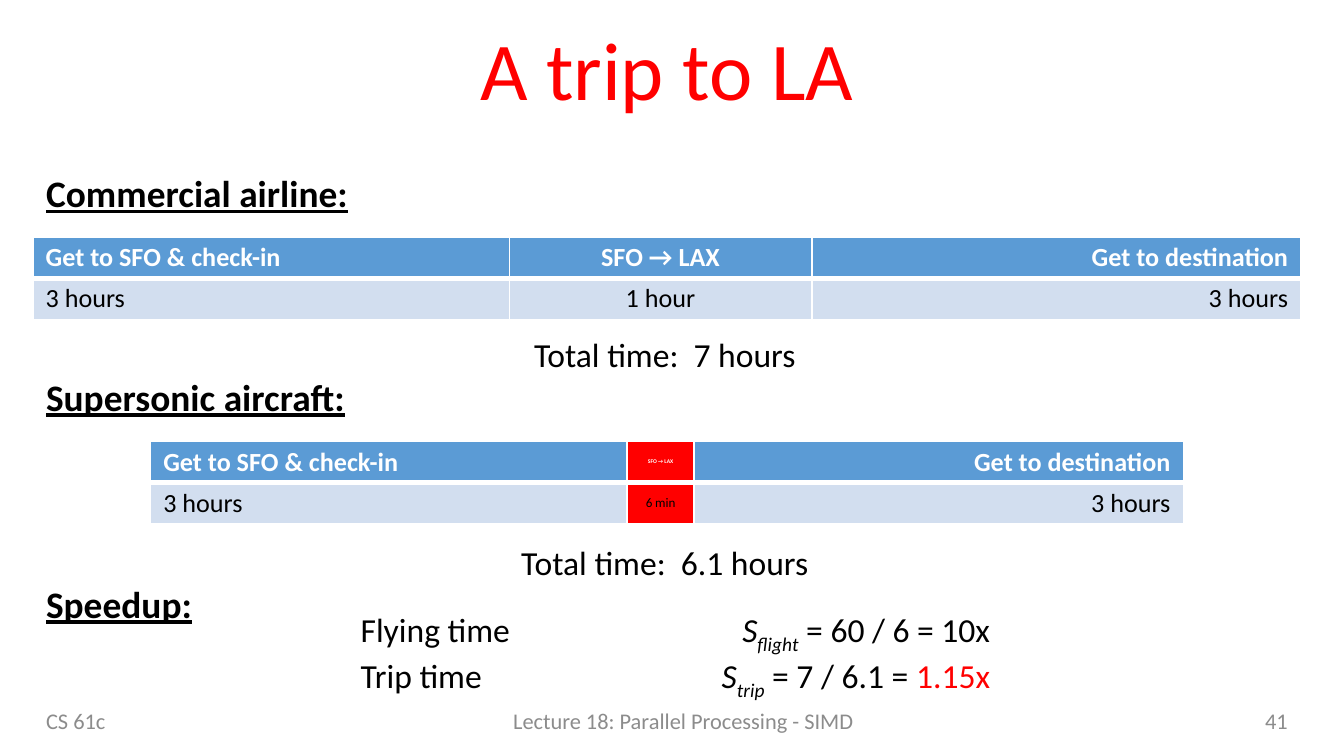
from dataclasses import dataclass

from lxml import etree
from pptx import Presentation
from pptx.dml.color import RGBColor
from pptx.enum.text import MSO_ANCHOR, MSO_AUTO_SIZE, PP_ALIGN
from pptx.oxml.ns import qn
from pptx.util import Pt

LEFT, MID, RIGHT = PP_ALIGN.LEFT, PP_ALIGN.CENTER, PP_ALIGN.RIGHT
TOP, MIDDLE = MSO_ANCHOR.TOP, MSO_ANCHOR.MIDDLE
GROW = MSO_AUTO_SIZE.SHAPE_TO_FIT_TEXT
SCALE = 4572
FONT = "Calibri"
BLACK, WHITE, RED, GREY = "000000", "FFFFFF", "FF0000", "8C8C8C"
BLUE, PALE = "5B9BD5", "D2DEEF"
ALIGNS = (LEFT, MID, RIGHT)
EDGE = 49
ROW = 61


@dataclass
class Run:
    text: str
    size: float = 18
    color: str = BLACK
    bold: bool = False
    under: bool = False
    slant: bool = False
    base: int = 0


@dataclass
class Box:
    at: tuple[int, int, int, int]
    lines: list[list[Run]]
    align: PP_ALIGN = LEFT
    anchor: MSO_ANCHOR = TOP
    wrap: bool = False
    grow: bool = True
    space: float = 1.0
    tab: int = 0


@dataclass
class Trip:
    left: int
    top: int
    width: int
    time: str
    sizes: tuple[int, int] = (14, 14)
    fill: str = ""


def px(num: int) -> int:
    return num * SCALE


def rgb(code: str) -> RGBColor:
    return RGBColor.from_string(code)


def add_run(para, item: Run) -> None:
    run = para.add_run()
    run.text = item.text
    font = run.font
    font.name, font.size = FONT, Pt(item.size)
    font.bold, font.italic, font.underline = item.bold, item.slant, item.under
    font.color.rgb = rgb(item.color)
    if item.base:
        run._r.get_or_add_rPr().set("baseline", str(item.base * 1000))


def add_tab(para, stop: int) -> None:
    tabs = etree.SubElement(para._p.get_or_add_pPr(), qn("a:tabLst"))
    etree.SubElement(tabs, qn("a:tab"), pos=str(px(stop)), algn="r")


def add_box(slide, box: Box) -> None:
    frame = slide.shapes.add_textbox(*map(px, box.at)).text_frame
    frame.word_wrap = box.wrap
    frame.vertical_anchor = box.anchor
    if box.grow:
        frame.auto_size = GROW
    for num, line in enumerate(box.lines):
        para = frame.add_paragraph() if num else frame.paragraphs[0]
        para.alignment = box.align
        para.line_spacing = box.space
        if box.tab:
            add_tab(para, box.tab)
        for item in line:
            add_run(para, item)


def add_edges(cell, foot: int) -> None:
    props = cell._tc.get_or_add_tcPr()
    for side, width in zip("LRTB", (1, 1, 1, foot)):
        line = etree.SubElement(props, qn(f"a:ln{side}"), w=str(Pt(width)))
        fill = etree.SubElement(line, qn("a:solidFill"))
        etree.SubElement(fill, qn("a:srgbClr"), val=WHITE)


def add_trip(slide, trip: Trip) -> None:
    widths = (709, trip.width, 728)
    rows = (
        ("Get to SFO & check-in", "SFO → LAX", "Get to destination"),
        ("3 hours", trip.time, "3 hours"),
    )
    area = (trip.left, trip.top, sum(widths), 2 * ROW)
    grid = slide.shapes.add_table(2, 3, *map(px, area)).table
    for col, width in zip(grid.columns, widths):
        col.width = px(width)
    for r, row in enumerate(rows):
        grid.rows[r].height = px(ROW)
        for c, text in enumerate(row):
            cell = grid.cell(r, c)
            flight = c == 1
            add_edges(cell, 1 if r else 3)
            cell.fill.solid()
            tone = PALE if r else BLUE
            cell.fill.fore_color.rgb = rgb(trip.fill if flight and trip.fill else tone)
            cell.margin_left = cell.margin_right = px(19)
            cell.margin_top = cell.margin_bottom = px(7)
            cell.vertical_anchor = MIDDLE if flight and trip.fill else TOP
            para = cell.text_frame.paragraphs[0]
            para.alignment = ALIGNS[c]
            size = trip.sizes[r] if flight else 14
            add_run(para, Run(text, size, BLACK if r else WHITE, bold=not r))


def head(top: int, width: int, text: str) -> Box:
    return Box((EDGE, top, width, 88), [[Run(text, 20, bold=True, under=True)]])


def total(left: int, top: int, width: int, text: str) -> Box:
    return Box((left, top, width, 80), [[Run(text)]])


def foot(left: int, width: int, text: str, align: PP_ALIGN) -> Box:
    return Box((left, 1043, width, 60), [[Run(text, 12, GREY)]],
               align, MIDDLE, wrap=True, grow=False)


def ratio(name: str, sub: str, rest: list[Run]) -> list[Run]:
    return [Run(f"{name} \t"), Run("S", slant=True),
            Run(sub, slant=True, base=-25), *rest]


BOXES = [
    Box((EDGE, 24, 1887, 172), [[Run("A trip to LA", 44, RED)]],
        MID, MIDDLE, wrap=True, grow=False, space=0.9),
    head(244, 494, "Commercial airline:"),
    head(547, 492, "Supersonic aircraft:"),
    head(855, 260, "Speedup:"),
    total(775, 487, 440, "Total time:  7 hours"),
    total(756, 797, 478, "Total time:  6.1 hours"),
    Box((517, 897, 1390, 142), [
        ratio("Flying time", "flight", [Run(" = 60 / 6 = 10x")]),
        ratio("Trip time", "trip", [Run(" = 7 / 6.1 = "), Run("1.15x", color=RED)]),
    ], wrap=True, tab=937),
    foot(EDGE, 492, "CS 61c", LEFT),
    foot(585, 864, "Lecture 18: Parallel Processing - SIMD", MID),
    foot(1486, 450, "41", RIGHT),
]
TRIPS = [
    Trip(EDGE, 353, 450, "1 hour"),
    Trip(224, 657, 100, "6 min", (3, 7), RED),
]


def main() -> None:
    deck = Presentation()
    deck.slide_width, deck.slide_height = px(2000), px(1125)
    slide = deck.slides.add_slide(deck.slide_layouts[6])
    for trip in TRIPS:
        add_trip(slide, trip)
    for box in BOXES:
        add_box(slide, box)
    deck.save("out.pptx")


if __name__ == "__main__":
    main()
